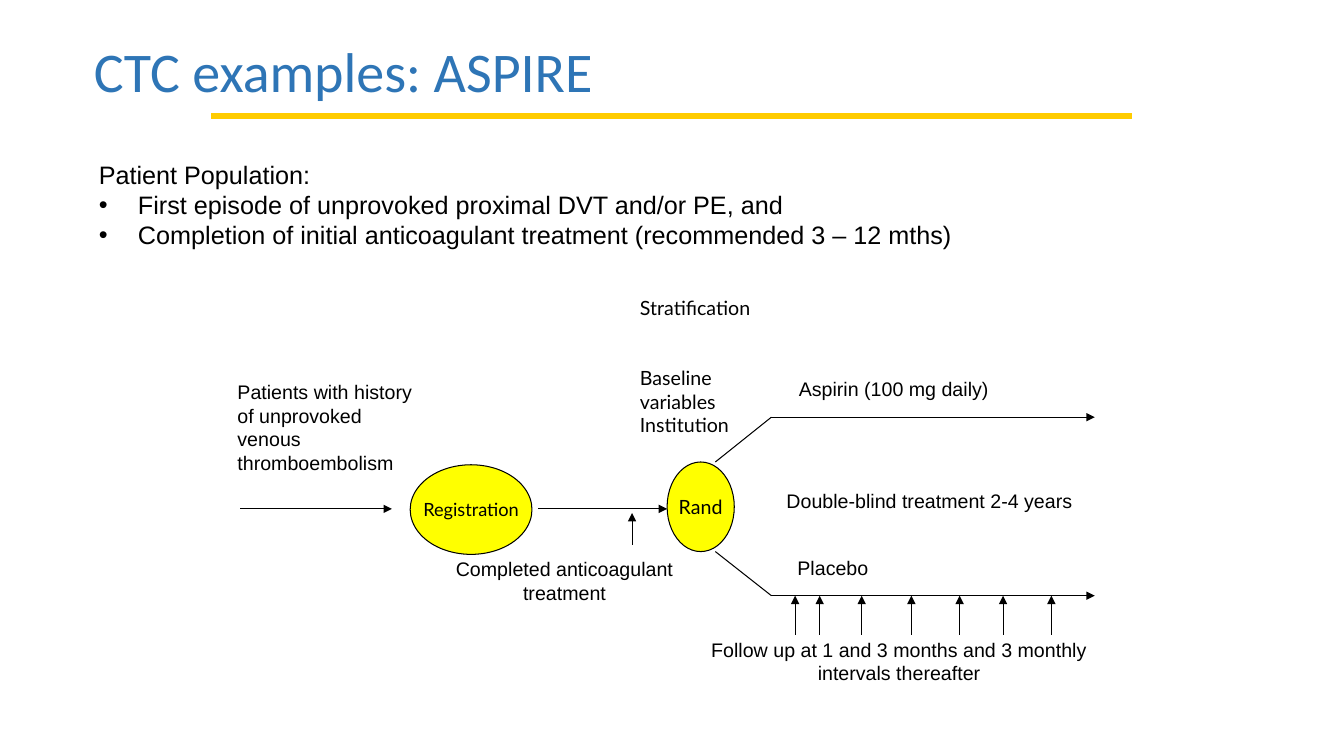
from dataclasses import dataclass

from lxml.etree import SubElement
from pptx import Presentation
from pptx.dml.color import RGBColor
from pptx.enum.shapes import MSO_CONNECTOR, MSO_SHAPE
from pptx.enum.text import MSO_ANCHOR, PP_ALIGN
from pptx.oxml.ns import qn
from pptx.util import Pt


@dataclass(frozen=True)
class Theme:
    ink: str = "000000"
    blue: str = "2E75B6"
    gold: str = "FFCC00"
    yellow: str = "FFFF00"
    sans: str = "Arial"
    alt: str = "Lato"
    head: str = "Calibri"
    title: float = 40
    body: float = 18
    label: float = 14
    small: float = 13
    thin: float = 0.75
    thick: float = 4.5


THEME = Theme()
CENTER = PP_ALIGN.CENTER


def paint(fill, color):
    fill.solid()
    fill.fore_color.rgb = RGBColor.from_string(color)


def write(frame, text, size=THEME.label, font=THEME.sans, color=THEME.ink,
          align=PP_ALIGN.LEFT, before=0, spacing=1.0, bullet=0):
    """Add a paragraph; bullet is the hanging indent, 0 for none."""
    para = frame.paragraphs[0]
    if para.runs:
        para = frame.add_paragraph()
    para.alignment = align
    para.line_spacing = spacing
    if before:
        para.space_before = Pt(before)
    if bullet:
        props = para._p.get_or_add_pPr()
        props.set("marL", str(Pt(bullet)))
        props.set("indent", str(-Pt(bullet)))
        SubElement(props, qn("a:buFont"), typeface=THEME.sans)
        SubElement(props, qn("a:buChar"), char="•")
    run = para.add_run()
    run.text = text
    run.font.size = Pt(size)
    run.font.name = font
    run.font.color.rgb = RGBColor.from_string(color)


def frame(slide, left, top, width, height, anchor=MSO_ANCHOR.TOP):
    """Add an empty wrapping text box and return its text frame."""
    box = slide.shapes.add_textbox(Pt(left), Pt(top), Pt(width), Pt(height))
    box.text_frame.word_wrap = True
    box.text_frame.vertical_anchor = anchor
    return box.text_frame


def line(slide, start, end, color=THEME.ink, width=THEME.thin, arrow=False):
    link = slide.shapes.add_connector(
        MSO_CONNECTOR.STRAIGHT, *map(Pt, start), *map(Pt, end))
    paint(link.line.fill, color)
    link.line.width = Pt(width)
    if arrow:
        SubElement(link.line._get_or_add_ln(), qn("a:tailEnd"), type="triangle")
    SubElement(link._element.spPr, qn("a:effectLst"))


def node(slide, text, left, top, width, height, size):
    oval = slide.shapes.add_shape(
        MSO_SHAPE.OVAL, Pt(left), Pt(top), Pt(width), Pt(height))
    oval.shadow.inherit = False
    paint(oval.fill, THEME.yellow)
    paint(oval.line.fill, THEME.ink)
    oval.line.width = Pt(THEME.thin)
    oval.text_frame.word_wrap = False
    oval.text_frame.vertical_anchor = MSO_ANCHOR.MIDDLE
    write(oval.text_frame, text, size=size, font=THEME.alt, align=CENTER)


def header(slide):
    title = frame(slide, 60, 24.5, 470, 58, MSO_ANCHOR.MIDDLE)
    write(title, "CTC examples: ASPIRE", size=THEME.title, font=THEME.head,
          color=THEME.blue, spacing=0.9)
    line(slide, (151, 83), (808.5, 83), THEME.gold, THEME.thick)


def criteria(slide):
    body = frame(slide, 63.5, 110, 692, 73)
    write(body, "Patient Population:", size=THEME.body)
    for text in (
            "First episode of unprovoked proximal DVT and/or PE, and",
            "Completion of initial anticoagulant treatment (recommended 3 – 12 mths)"):
        write(body, text, size=THEME.body, bullet=28)


def labels(slide):
    for text, place, align in (
            ("Patients with history of unprovoked venous thromboembolism",
             (162.5, 268, 148.5, 75), PP_ALIGN.LEFT),
            ("Aspirin (100 mg daily)", (563.5, 265.5, 191.5, 32), PP_ALIGN.LEFT),
            ("Placebo", (562.5, 393.5, 70, 32), PP_ALIGN.LEFT),
            ("Double-blind treatment 2-4 years", (528.5, 345.5, 271, 36), CENTER),
            ("Follow up at 1 and 3 months and 3 monthly intervals thereafter",
             (481, 452, 322.5, 30), CENTER),
            ("Completed anticoagulant treatment",
             (315.5, 394.5, 175.5, 41), CENTER)):
        write(frame(slide, *place), text, align=align)
    strata = frame(slide, 450, 207.5, 117.5, 133)
    for text, gap in (("Stratification", 0), ("Baseline variables", 33.6),
                      ("Institution", 0)):
        write(strata, text, font=THEME.alt, before=gap)


def flow(slide):
    level, fork, bend, end = 363.5, 511, 551, 782
    for left, right in ((171.5, 280), (384.5, 476.5)):
        line(slide, (left, level), (right, level), arrow=True)
    line(slide, (451.5, 389), (451.5, 366.5), arrow=True)
    node(slide, "Registration", 293, 332, 87, 64, THEME.small)
    node(slide, "Rand", 476.5, 330, 48, 64, THEME.label)
    upper, lower = 298, 425.5
    for edge, arm in ((330, upper), (394, lower)):
        line(slide, (fork, edge), (bend, arm))
        line(slide, (bend, arm), (end, arm), arrow=True)
    for visit in (568, 585.5, 615.5, 651, 685.5, 716.5, 751):
        line(slide, (visit, 453.5), (visit, lower), arrow=True)


def main():
    deck = Presentation()
    deck.slide_width, deck.slide_height = Pt(960), Pt(540)
    slide = deck.slides.add_slide(deck.slide_layouts[6])
    header(slide)
    criteria(slide)
    flow(slide)
    labels(slide)
    deck.save("out.pptx")


if __name__ == "__main__":
    main()
